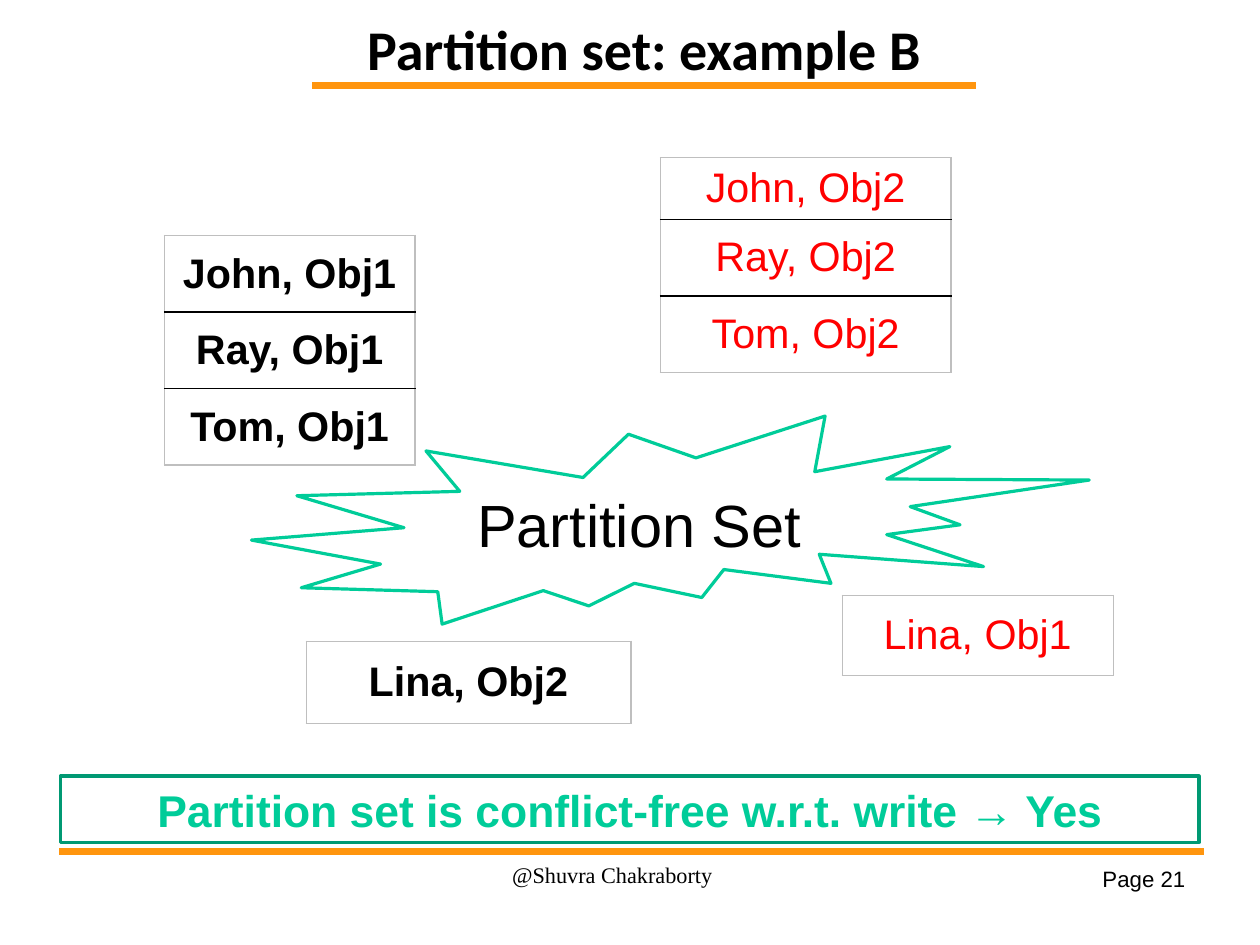
"""Build the slide on partition set example B."""
from dataclasses import dataclass

import lxml.etree
import pptx
import pptx.dml.color
import pptx.enum.shapes
import pptx.enum.text
import pptx.oxml.ns
import pptx.util

Inches = pptx.util.Inches
Align = pptx.enum.text.PP_ALIGN
Anchor = pptx.enum.text.MSO_ANCHOR
Shape = pptx.enum.shapes.MSO_SHAPE
qn = pptx.oxml.ns.qn

COLORS = {
    "black": "000000",
    "white": "FFFFFF",
    "red": "FF0000",
    "orange": "FF950E",
    "mint": "00CC99",
    "green": "009973",
    "gray": "BFBFBF",
}


@dataclass
class Style:
    size: float
    color: str = "black"
    bold: bool = False
    font: str = "Arial"
    align: Align = Align.CENTER
    anchor: Anchor = Anchor.MIDDLE
    space: float = 1.0
    inset: tuple[float, float] = (0.1, 0.05)


@dataclass
class Box:
    text: str
    place: tuple[float, float, float, float]
    style: Style
    shape: Shape | None = None
    fill: str | None = None
    line: str | None = None
    width: float = 0


@dataclass
class Grid:
    left: float
    top: float
    width: float
    rows: dict[str, float]
    style: Style


PLAIN = Style(26, "red", inset=(0.08, 0.04))
STRONG = Style(26, bold=True, inset=(0.08, 0.04))

RULES = [(2.76, 8.51, 0.75), (0.55, 10.5, 7.45)]

GRIDS = [
    Grid(1.44, 2.06, 2.19,
         {"John, Obj1": 0.67, "Ray, Obj1": 0.67, "Tom, Obj1": 0.67}, STRONG),
    Grid(7.37, 5.21, 2.37, {"Lina, Obj1": 0.7}, PLAIN),
    Grid(2.68, 5.61, 2.84, {"Lina, Obj2": 0.72}, STRONG),
    Grid(5.78, 1.38, 2.54,
         {"John, Obj2": 0.54, "Ray, Obj2": 0.67, "Tom, Obj2": 0.67}, PLAIN),
]

BOXES = [
    Box("Partition Set", (2.2, 3.64, 7.33, 1.82), Style(37.5),
        Shape.EXPLOSION2, "white", "mint", 2),
    Box("Partition set: example B", (2.66, 0.22, 5.95, 0.56),
        Style(35.3, bold=True, font="Calibri", anchor=Anchor.BOTTOM,
              space=0.9, inset=(0.11, 0.06))),
    Box("Partition set is conflict-free w.r.t. write → Yes",
        (0.53, 6.79, 9.96, 0.58), Style(28, "mint", True),
        Shape.RECTANGLE, None, "green", 2.25),
    Box("@Shuvra Chakraborty", (4.48, 7.53, 2.56, 0.56),
        Style(14, font="Times New Roman", align=Align.LEFT,
              anchor=Anchor.TOP, space=1.01, inset=(0, 0))),
    Box("Page 21", (8.58, 7.52, 1.89, 0.42),
        Style(14, align=Align.RIGHT, anchor=Anchor.TOP)),
]


def tint(name: str) -> pptx.dml.color.RGBColor:
    return pptx.dml.color.RGBColor.from_string(COLORS[name])


def write(frame, text: str, style: Style) -> None:
    para = frame.paragraphs[0]
    para.alignment = style.align
    para.line_spacing = style.space
    run = para.add_run()
    run.text = text
    run.font.name = style.font
    run.font.size = pptx.util.Pt(style.size)
    run.font.bold = style.bold
    run.font.color.rgb = tint(style.color)


def pad(owner, style: Style) -> None:
    side, edge = map(Inches, style.inset)
    owner.margin_left = owner.margin_right = side
    owner.margin_top = owner.margin_bottom = edge
    owner.vertical_anchor = style.anchor


def draw_rule(slide, left: float, right: float, top: float) -> None:
    rule = slide.shapes.add_connector(
        pptx.enum.shapes.MSO_CONNECTOR.STRAIGHT,
        Inches(left), Inches(top), Inches(right), Inches(top))
    rule.line.color.rgb = tint("orange")
    rule.line.width = pptx.util.Pt(4.31)
    props = rule._element.spPr
    props.find(qn("a:ln")).set("cap", "sq")
    lxml.etree.SubElement(props, qn("a:effectLst"))


def edge_cell(cell, first: bool, last: bool) -> None:
    props = cell._tc.get_or_add_tcPr()
    edges = {"L": "gray", "R": "gray",
             "T": "gray" if first else "black",
             "B": "gray" if last else "black"}
    for side, color in edges.items():
        line = lxml.etree.SubElement(
            props, qn(f"a:ln{side}"), w=str(pptx.util.Pt(1)))
        fill = lxml.etree.SubElement(line, qn("a:solidFill"))
        lxml.etree.SubElement(fill, qn("a:srgbClr"), val=COLORS[color])


def draw_grid(slide, grid: Grid) -> None:
    count = len(grid.rows)
    table = slide.shapes.add_table(
        count, 1, Inches(grid.left), Inches(grid.top), Inches(grid.width),
        Inches(sum(grid.rows.values()))).table
    table.first_row = table.horz_banding = False
    for i, (text, height) in enumerate(grid.rows.items()):
        table.rows[i].height = Inches(height)
        cell = table.cell(i, 0)
        pad(cell, grid.style)
        edge_cell(cell, i == 0, i == count - 1)
        cell.fill.background()
        write(cell.text_frame, text, grid.style)


def draw_box(slide, box: Box) -> None:
    place = map(Inches, box.place)
    if box.shape is None:
        item = slide.shapes.add_textbox(*place)
    else:
        item = slide.shapes.add_shape(box.shape, *place)
        item.shadow.inherit = False
        item.line.color.rgb = tint(box.line)
        item.line.width = pptx.util.Pt(box.width)
        if box.fill:
            item.fill.solid()
            item.fill.fore_color.rgb = tint(box.fill)
        else:
            item.fill.background()
    frame = item.text_frame
    frame.word_wrap = True
    pad(frame, box.style)
    write(frame, box.text, box.style)


def main() -> None:
    deck = pptx.Presentation()
    deck.slide_width = Inches(28 / 2.54)
    deck.slide_height = Inches(21 / 2.54)
    slide = deck.slides.add_slide(deck.slide_layouts[6])
    for rule in RULES:
        draw_rule(slide, *rule)
    for grid in GRIDS:
        draw_grid(slide, grid)
    for box in BOXES:
        draw_box(slide, box)
    deck.save("out.pptx")


if __name__ == "__main__":
    main()
